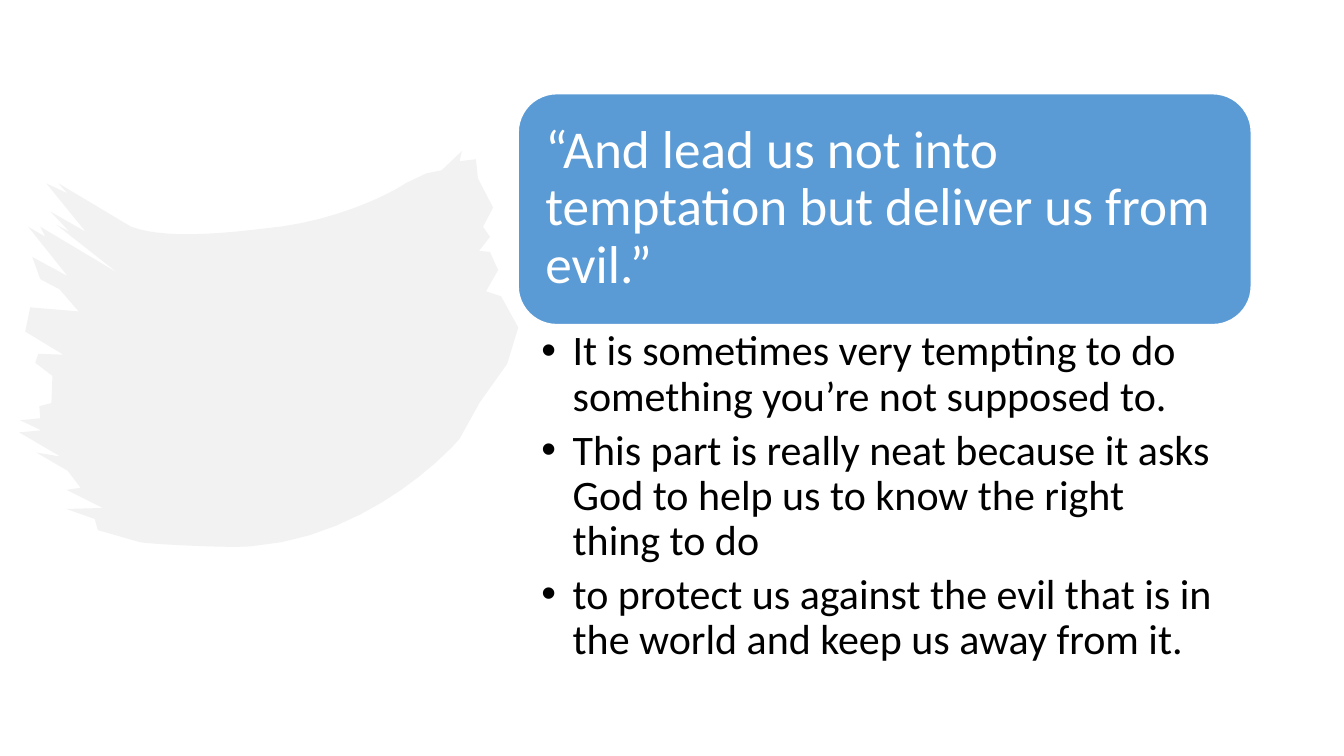
"""Builds a slide on one line of the Lord's Prayer and its meaning."""
from lxml import etree
from pptx import Presentation
from pptx.dml.color import RGBColor
from pptx.enum.shapes import MSO_SHAPE
from pptx.enum.text import MSO_ANCHOR, MSO_AUTO_SIZE, PP_ALIGN
from pptx.oxml.ns import qn
from pptx.util import Inches, Pt

ROUNDED = MSO_SHAPE.ROUNDED_RECTANGLE
MIDDLE, TOP = MSO_ANCHOR.MIDDLE, MSO_ANCHOR.TOP
NO_FIT = MSO_AUTO_SIZE.NONE
LEFT = PP_ALIGN.LEFT
COLORS = {"panel": "5B9BD5", "brush": "E7E6E6", "white": "FFFFFF", "black": "000000"}
FONT = "Calibri"

QUOTE = ["“And lead us not into temptation but deliver us from evil.”"]
MEANING = [
    "It is sometimes very tempting to do something you’re not supposed to.",
    "This part is really neat because it asks God to help us to know the right thing to do",
    "to protect us against the evil that is in the world and keep us away from it.",
]

BRUSH_OUTLINE = [
    (4.58, 1.5), (4.56, 1.6), (4.72, 1.58), (4.74, 1.77), (4.89, 2.06), (4.79, 2.25),
    (4.86, 2.35), (4.75, 2.49), (4.86, 2.5), (4.94, 2.68), (4.82, 2.89), (4.97, 2.94),
    (5.14, 3.25), (5.03, 3.61), (4.76, 3.99), (4.56, 4.35),
    (4.56, 4.36, 3.72, 5.33, 2.49, 5.42), (2.29, 5.44, 1.5, 5.4, 1.39, 5.38),
    (0.97, 5.26), (0.94, 5.15), (0.66, 5.05), (1.02, 5.04), (0.66, 4.86), (0.8, 4.84),
    (0.67, 4.67), (0.36, 4.49), (0.6, 4.53), (0.19, 4.29), (0.41, 4.27), (0.2, 4.17),
    (0.4, 4.15), (0.39, 4.03), (0.51, 4), (0.52, 3.73), (0.35, 3.6), (0.38, 3.51),
    (0.63, 3.52), (0.25, 3.29), (0.3, 3.05), (0.78, 3.09), (0.59, 2.87), (0.4, 2.77),
    (0.32, 2.55), (0.67, 2.74), (0.28, 2.25), (0.45, 2.35), (0.4, 2.25), (1.17, 2.71),
    (0.56, 2.23), (0.69, 2.3), (0.5, 2.1), (0.85, 2.3), (0.46, 1.82), (0.67, 1.92),
    (0.58, 1.82), (1.3, 2.25), (1.6, 2.36, 2.1, 2.33, 2.6, 2.27),
    (3.42, 2.2, 4, 1.84, 4.02, 1.82), (4.23, 1.72), (4.38, 1.69),
]


def trace(outline, steps=12):
    """Returns outline points, with each six-number Bézier entry sampled."""
    points = []
    for entry in outline:
        if len(entry) == 2:
            points.append(entry)
            continue
        corners = [points[-1], entry[:2], entry[2:4], entry[4:]]
        for step in range(1, steps + 1):
            t = step / steps
            weights = ((1 - t) ** 3, 3 * t * (1 - t) ** 2, 3 * t * t * (1 - t), t ** 3)
            points.append(tuple(sum(w * c[axis] for w, c in zip(weights, corners))
                                for axis in (0, 1)))
    return points


def write_text(frame, lines, *, size, color, anchor, margins, after, hanging=0):
    """Fills a text frame, with bullets when a hanging indent is given."""
    frame.word_wrap = True
    frame.auto_size = NO_FIT
    frame.vertical_anchor = anchor
    (frame.margin_left, frame.margin_top,
     frame.margin_right, frame.margin_bottom) = map(Inches, margins)
    frame.text = "\n".join(lines)
    for paragraph in frame.paragraphs:
        paragraph.alignment = LEFT
        paragraph.line_spacing = 0.9
        paragraph.space_before = Pt(0)
        paragraph.space_after = Pt(after)
        font = paragraph.runs[0].font
        font.name, font.size = FONT, Pt(size)
        font.color.rgb = RGBColor.from_string(COLORS[color])
        if hanging:
            properties = paragraph._p.get_or_add_pPr()
            properties.set("marL", str(Inches(hanging)))
            properties.set("indent", str(-Inches(hanging)))
            etree.SubElement(properties, qn("a:buFont")).set("typeface", "Arial")
            etree.SubElement(properties, qn("a:buChar")).set("char", "•")


class PrayerSlide:
    """Holds the current slide and its shared style."""

    def __init__(self, deck):
        """Adds a title and content slide."""
        self.slide = deck.slides.add_slide(deck.slide_layouts[1])

    def finish(self, shape, fill):
        """Colours a shape and sends it behind the text."""
        shape.shadow.inherit = False
        shape.fill.solid()
        shape.fill.fore_color.rgb = RGBColor.from_string(COLORS[fill])
        self.slide.shapes._spTree.insert(2, shape._element)

    def panel(self, box, fill, outline):
        """Draws a rounded panel."""
        panel = self.slide.shapes.add_shape(ROUNDED, *map(Inches, box))
        self.finish(panel, fill)
        panel.line.color.rgb = RGBColor.from_string(COLORS[outline])
        panel.line.width = Pt(1)

    def brush(self, outline, fill, opacity):
        """Draws a translucent brush stroke."""
        start, *rest = [tuple(map(Inches, point)) for point in trace(outline)]
        builder = self.slide.shapes.build_freeform(*start)
        builder.add_line_segments(rest, close=True)
        stroke = builder.convert_to_shape()
        self.finish(stroke, fill)
        stroke.line.fill.background()
        tint = stroke._element.spPr.find(qn("a:solidFill"))[0]
        etree.SubElement(tint, qn("a:alpha")).set("val", str(opacity * 1000))

    def placeholder(self, index, box, lines, **style):
        """Places and fills a template placeholder."""
        holder = self.slide.placeholders[index]
        holder.left, holder.top, holder.width, holder.height = map(Inches, box)
        write_text(holder.text_frame, lines, **style)


def main():
    """Builds and saves the deck."""
    deck = Presentation()
    deck.slide_width, deck.slide_height = Inches(13.33), Inches(7.5)
    prayer = PrayerSlide(deck)
    prayer.panel((5.14, 0.93, 7.27, 2.29), "panel", "white")
    prayer.brush(BRUSH_OUTLINE, "brush", 50)
    prayer.placeholder(0, (5.25, 1.04, 7.05, 2.06), QUOTE, size=38, color="white",
                       anchor=MIDDLE, margins=[0.16] * 4, after=0)
    prayer.placeholder(1, (5.14, 3.22, 7.27, 3.53), MEANING, size=30, color="black",
                       anchor=TOP, margins=(0.23, 0.05, 0.3, 0.05), after=6, hanging=0.31)
    deck.save("out.pptx")


if __name__ == "__main__":
    main()
